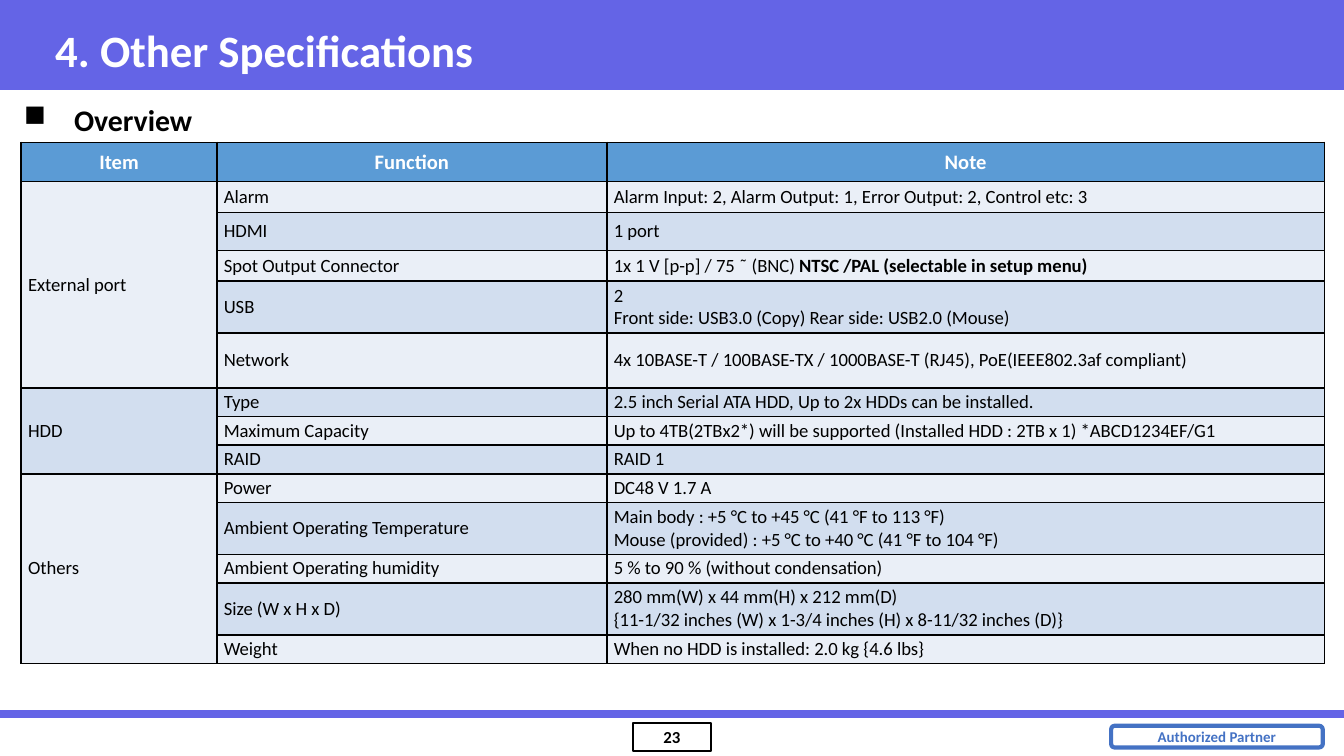
import dataclasses

import pptx
import pptx.dml.color
import pptx.enum.shapes
import pptx.enum.text
import pptx.oxml
import pptx.oxml.ns
import pptx.util

Cm, Pt = pptx.util.Cm, pptx.util.Pt
RGB = pptx.dml.color.RGBColor.from_string
Align = pptx.enum.text.PP_ALIGN
Anchor = pptx.enum.text.MSO_ANCHOR
Shape = pptx.enum.shapes.MSO_SHAPE


@dataclasses.dataclass(frozen=True)
class Theme:
    font: str = "Calibri"
    bar: str = "6464E6"
    badge: str = "4472C4"
    head: str = "5B9BD5"
    bands: tuple = ("EAEFF7", "D2DEEF")
    ink: str = "000000"
    paper: str = "FFFFFF"
    title: int = 24
    lead: int = 16
    label: int = 11
    body: int = 10
    page: int = 9
    tag: int = 8


theme = Theme()


def write(frame, text, size, color, bold=True, align=Align.LEFT, **form):
    """Fill a text frame or cell; ** marks a bold stretch, form sets its attributes."""
    for name, value in form.items():
        setattr(frame, name, value)
    body = getattr(frame, "text_frame", frame)
    for i, line in enumerate(text.split("\n")):
        par = body.add_paragraph() if i else body.paragraphs[0]
        par.alignment = align
        for j, part in enumerate(line.split("**")):
            if part:
                run = par.add_run()
                run.text = part
                look = {"name": theme.font, "size": Pt(size), "bold": bold or j % 2 == 1}
                for name, value in look.items():
                    setattr(run.font, name, value)
                run.font.color.rgb = RGB(color)


def add(parent, xml):
    """Append an element written in the a: namespace."""
    space = pptx.oxml.ns.nsdecls("a")
    item = pptx.oxml.parse_xml(xml.replace(" ", f" {space} ", 1))
    parent.append(item)


deck = pptx.Presentation()
deck.slide_width, deck.slide_height = Cm(25.4), Cm(14.28)
slide = deck.slides.add_slide(deck.slide_layouts[5])
shapes = slide.shapes

# Bar, page box and partner badge
frames = [
    (Shape.RECTANGLE, (0, 0, 25.4, 1.7), theme.bar, None, 0, "", 0),
    (Shape.RECTANGLE, (11.96, 13.66, 1.48, 0.52), None, theme.ink, 1, "23", theme.page),
    (Shape.ROUNDED_RECTANGLE, (21, 13.71, 4, 0.41), None, theme.badge, 2.25,
     "Authorized Partner", theme.tag),
]
for kind, place, fill, edge, width, text, size in frames:
    box = shapes.add_shape(kind, *map(Cm, place))
    box.shadow.inherit = False
    if fill:
        box.fill.solid()
        box.fill.fore_color.rgb = RGB(fill)
    else:
        box.fill.background()
    if edge:
        box.line.color.rgb = RGB(edge)
        box.line.width = Pt(width)
        write(box.text_frame, text, size, edge, align=Align.CENTER, word_wrap=False,
              vertical_anchor=Anchor.MIDDLE, margin_top=Cm(0.08), margin_bottom=Cm(0.08))
    else:
        box.line.fill.background()

rule = shapes.add_connector(pptx.enum.shapes.MSO_CONNECTOR.STRAIGHT,
                            0, Cm(13.49), Cm(25.4), Cm(13.49))
rule.line.color.rgb = RGB(theme.bar)
rule.line.width = Pt(4.5)
add(rule.element.spPr, "<a:effectLst />")

# Title, brought in front of the bar
title = shapes.title
place = {"left": Cm(0.79), "top": Cm(0.2), "width": Cm(23.52), "height": Cm(1.47)}
for name, value in place.items():
    setattr(title, name, value)
write(title.text_frame, "4. Other Specifications", theme.title, theme.paper,
      vertical_anchor=Anchor.MIDDLE, word_wrap=True,
      auto_size=pptx.enum.text.MSO_AUTO_SIZE.NONE)
title.element.getparent().append(title.element)

lead = shapes.add_textbox(Cm(0.2), Cm(1.78), Cm(9.6), Cm(0.94)).text_frame
props = lead.paragraphs[0]._p.get_or_add_pPr()
props.set("marL", str(Cm(0.95)))
props.set("indent", str(Cm(-0.95)))
add(props, '<a:buChar char="■"/>')
write(lead, "Overview", theme.lead, theme.ink, word_wrap=True,
      vertical_anchor=Anchor.BOTTOM)

# Specification table: group, then (function, note, row height)
groups = {
    "External port": [
        ("Alarm", "Alarm Input: 2, Alarm Output: 1, Error Output: 2, Control etc: 3", 0.58),
        ("HDMI", "1 port", 0.72),
        ("Spot Output Connector",
         "1x 1 V [p-p] / 75 ˜ (BNC)** NTSC /PAL (selectable in setup menu)**", 0.58),
        ("USB", "2\nFront side: USB3.0 (Copy) Rear side: USB2.0 (Mouse)", 0.98),
        ("Network",
         "4x 10BASE-T / 100BASE-TX / 1000BASE-T (RJ45), PoE(IEEE802.3af compliant)", 1.04),
    ],
    "HDD": [
        ("Type", "2.5 inch Serial ATA HDD, Up to 2x HDDs can be installed.", 0.54),
        ("Maximum Capacity",
         "Up to 4TB(2TBx2*) will be supported (Installed HDD : 2TB x 1) *ABCD1234EF/G1", 0.54),
        ("RAID", "RAID 1", 0.54),
    ],
    "Others": [
        ("Power", "DC48 V 1.7 A", 0.54),
        ("Ambient Operating Temperature",
         "Main body : +5 °C to +45 °C (41 °F to 113 °F)\n"
         "Mouse (provided) : +5 °C to +40 °C (41 °F to 104 °F)", 0.98),
        ("Ambient Operating humidity", "5 % to 90 % (without condensation)", 0.54),
        ("Size (W x H x D)",
         "280 mm(W) x 44 mm(H) x 212 mm(D)\n"
         "{11-1/32 inches (W) x 1-3/4 inches (H) x 8-11/32 inches (D)}", 0.98),
        ("Weight", "When no HDD is installed: 2.0 kg {4.6 lbs}", 0.54),
    ],
}
rows = [("Item", "Function", "Note", 0.74)]
spans = []
for group, items in groups.items():
    spans.append((len(rows), len(rows) + len(items) - 1))
    for i, item in enumerate(items):
        rows.append(("" if i else group, *item))

widths = (3.7, 7.37, 13.56)
grid = shapes.add_table(len(rows), len(widths), Cm(0.4), Cm(2.69), Cm(sum(widths)),
                        Cm(sum(row[-1] for row in rows))).table
for col, width in zip(grid.columns, widths):
    col.width = Cm(width)
for first, last in spans:
    grid.cell(first, 0).merge(grid.cell(last, 0))

top = {"size": theme.label, "color": theme.paper, "align": Align.CENTER}
plain = {"size": theme.body, "color": theme.ink, "bold": False}
for r, (*texts, height) in enumerate(rows):
    grid.rows[r].height = Cm(height)
    side, edge = (0.13, 0.05) if r else (0.25, 0.13)
    for c, text in enumerate(texts):
        cell = grid.cell(r, c)
        write(cell, text, **(plain if r else top), vertical_anchor=Anchor.MIDDLE,
              margin_left=Cm(side), margin_right=Cm(side),
              margin_top=Cm(edge), margin_bottom=Cm(edge))
        props = cell._tc.get_or_add_tcPr()
        for tag in ("lnL", "lnR", "lnT", "lnB"):
            add(props, f'<a:{tag} w="{Pt(1)}"><a:solidFill>'
                       f'<a:srgbClr val="{theme.ink}"/></a:solidFill></a:{tag}>')
        cell.fill.solid()
        cell.fill.fore_color.rgb = RGB(theme.bands[(r - 1) % 2] if r else theme.head)

deck.save("out.pptx")
